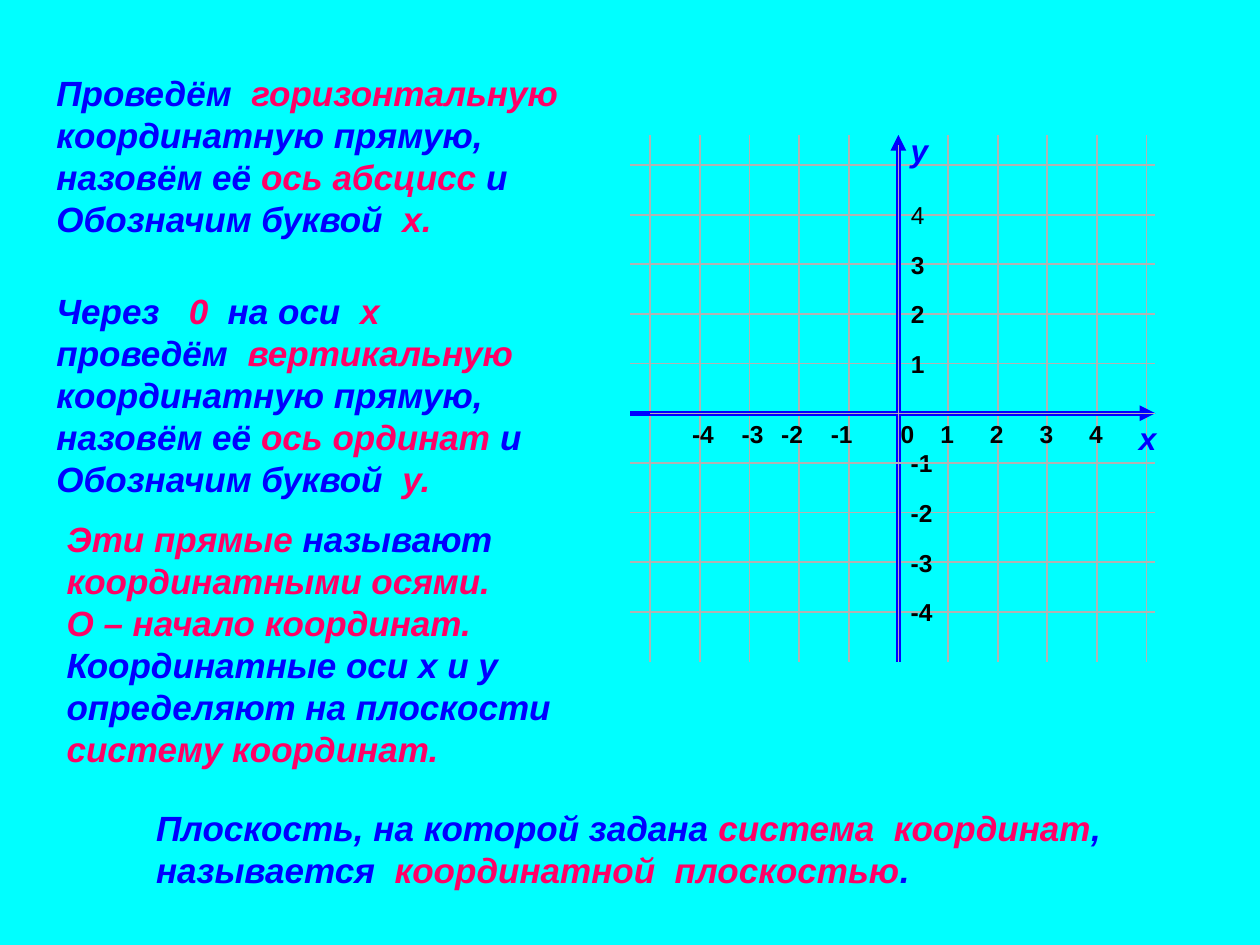
from lxml import etree
from pptx import Presentation
from pptx.dml.color import RGBColor
from pptx.enum.shapes import MSO_CONNECTOR as Connector
from pptx.oxml.ns import qn
from pptx.util import Inches, Pt

color_of = RGBColor.from_string
BLUE, PINK, GRAY, BLACK, CYAN = "0000FF", "FF0066", "B2B2B2", "000000", "00FFFF"

LEFT, RIGHT, TOP, BOTTOM = 5, 9.17, 1.07, 5.25
FIRST_COLUMN, LAST_COLUMN = 5.16, 9.1
STEP = (LAST_COLUMN - FIRST_COLUMN) / 10
ORIGIN_X, ORIGIN_Y = 7.13, 3.28
LABEL_HEIGHT = 0.33

PASSAGE_FORMAT = {"name": "Arial", "size": Pt(20), "bold": True, "italic": True}
AXIS_FORMAT = {**PASSAGE_FORMAT, "size": Pt(18)}
NUMBER_FORMAT = {"name": "Arial", "size": Pt(14), "bold": True}
PLAIN_NUMBER_FORMAT = {**NUMBER_FORMAT, "bold": False}


def add_text(left, top, width, height, lines, formats, colors=(BLUE, PINK)):
    box = page.shapes.add_textbox(Inches(left), Inches(top), Inches(width), Inches(height))
    frame = box.text_frame
    frame.word_wrap = False
    for index, line in enumerate(lines):
        para = frame.add_paragraph() if index else frame.paragraphs[0]
        for order, words in enumerate(line.split("|")):
            if words:
                span = para.add_run()
                span.text = words
                span.font.color.rgb = color_of(colors[order % len(colors)])
                for name, value in formats.items():
                    setattr(span.font, name, value)


def add_line(x1, y1, x2, y2, color=GRAY, width=1, arrow=False):
    line = page.shapes.add_connector(
        Connector.STRAIGHT, Inches(x1), Inches(y1), Inches(x2), Inches(y2))
    line.line.color.rgb = color_of(color)
    line.line.width = Pt(width)
    properties = line._element.spPr
    if arrow:
        etree.SubElement(properties.find(qn("a:ln")), qn("a:tailEnd"), type="triangle")
    etree.SubElement(properties, qn("a:effectLst"))


deck = Presentation()
deck.slide_width, deck.slide_height = Inches(10), Inches(7.5)
page = deck.slides.add_slide(deck.slide_layouts[6])
page.background.fill.solid()
page.background.fill.fore_color.rgb = color_of(CYAN)

for row in (-5, -4, -3, -2, -1, 2, 3, 4):
    y = ORIGIN_Y + row * STEP
    add_line(LEFT, y, RIGHT, y)
for column in (-5, -4, -3, -2, -1, 1, 2, 3, 4, 5):
    x = ORIGIN_X + column * STEP
    add_line(x, BOTTOM, x, TOP)

add_line(ORIGIN_X, BOTTOM, ORIGIN_X, TOP, BLUE, 3, arrow=True)
add_line(LEFT, ORIGIN_Y, RIGHT, ORIGIN_Y, BLUE, 3, arrow=True)
add_text(ORIGIN_X, 0.99, 0.24, 0.4, ["y"], AXIS_FORMAT)
add_text(8.94, ORIGIN_Y, 0.47, 0.4, ["x"], AXIS_FORMAT)

for value in range(-4, 5):
    label = [str(value)]
    width = 0.37 if value < 0 else 0.31
    shift = {-2: 0.24, -1: 0.24, 0: 0.08}.get(value, 0.16)
    add_text(ORIGIN_X + value * STEP - shift, ORIGIN_Y, width, LABEL_HEIGHT,
             label, NUMBER_FORMAT, [BLACK])
    if value:
        formats = PLAIN_NUMBER_FORMAT if value == 4 else NUMBER_FORMAT
        add_text(ORIGIN_X, ORIGIN_Y - value * STEP - LABEL_HEIGHT / 2, width, LABEL_HEIGHT,
                 label, formats, [BLACK])

add_line(FIRST_COLUMN, ORIGIN_Y, RIGHT, ORIGIN_Y, width=0.75)
add_line(ORIGIN_X, BOTTOM, ORIGIN_X, TOP + 0.08, width=0.75)
add_line(LEFT, ORIGIN_Y + STEP, RIGHT, ORIGIN_Y + STEP)

passages = (
    (0.35, 0.52, 4.27, 1.43, (
        "Проведём  |горизонтальную",
        "координатную прямую,",
        "назовём её |ось абсцисс| и",
        "Обозначим буквой  |x.")),
    (0.35, 2.25, 4.43, 2.1, (
        "Через   |0|  на оси  |x",
        "проведём  |вертикальную",
        "координатную прямую,",
        "назовём её |ось ординат| и",
        "Обозначим буквой  |y.")),
    (0.43, 4.06, 4.12, 2.43, (
        "|Эти прямые| называют",
        "|координатными осями.",
        "|О – начало координат.",
        "Координатные оси x и y",
        "определяют на плоскости",
        "|систему координат.")),
    (1.14, 6.35, 7.77, 0.77, (
        "Плоскость, на которой задана |система  координат|,",
        "называется  |координатной  плоскостью|.")),
)
for left, top, width, height, lines in passages:
    add_text(left, top, width, height, lines, PASSAGE_FORMAT)

deck.save("out.pptx")
